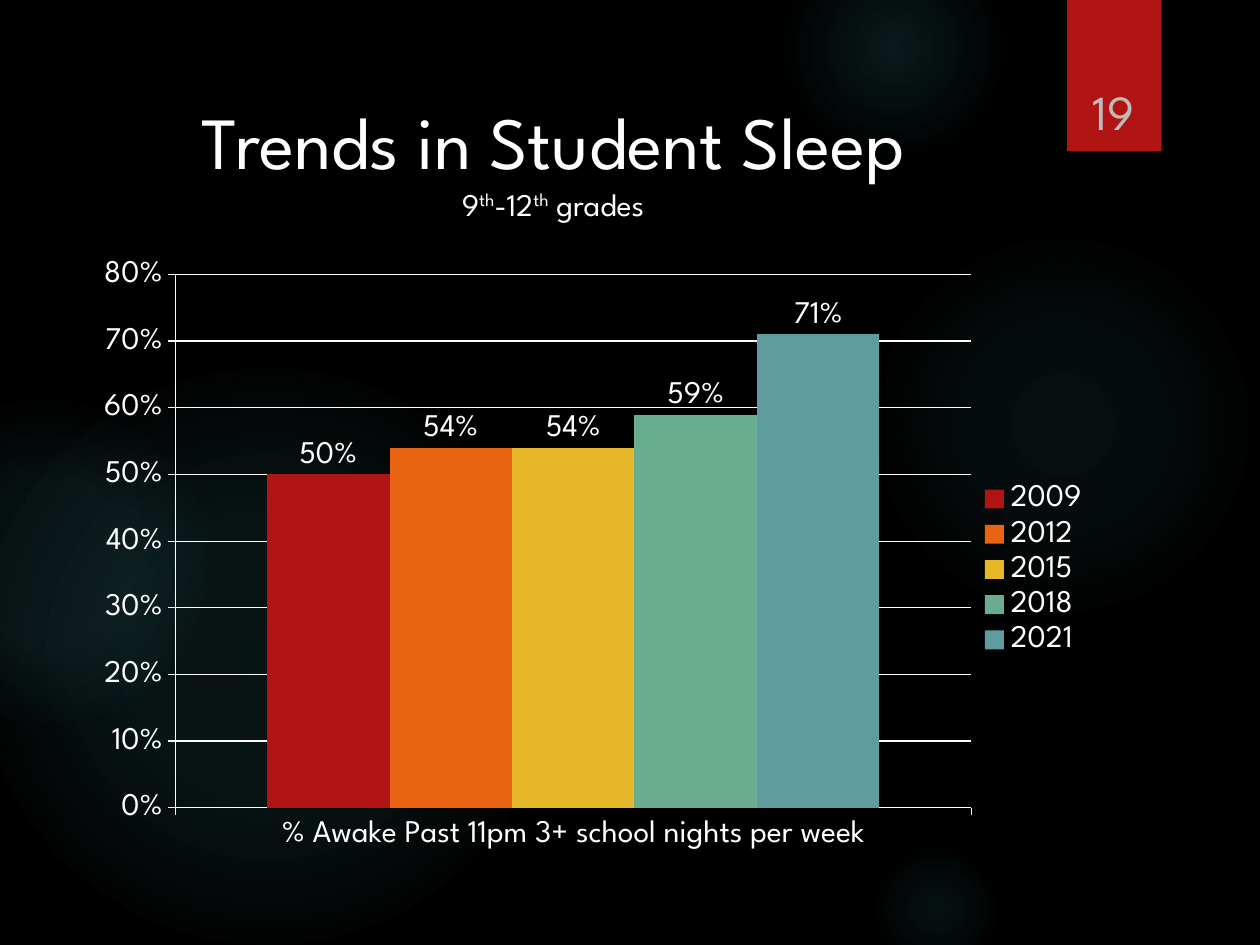
from lxml.etree import SubElement
from pptx import Presentation
from pptx.chart.data import CategoryChartData
from pptx.dml.color import RGBColor
from pptx.enum.chart import XL_CHART_TYPE as ChartType
from pptx.enum.chart import XL_LABEL_POSITION as LabelPosition
from pptx.enum.chart import XL_LEGEND_POSITION as LegendPosition
from pptx.enum.chart import XL_TICK_MARK as TickMark
from pptx.enum.shapes import MSO_SHAPE as Preset
from pptx.enum.text import MSO_ANCHOR as Anchor
from pptx.enum.text import PP_ALIGN as Align
from pptx.oxml import parse_xml
from pptx.oxml.ns import nsdecls, qn
from pptx.util import Inches, Pt

FONT = "League Spartan"
WHITE, BLACK, RED, GLOW = "FFFFFF", "000000", "B01513", "50B9C1"
COLUMNS, ROWS = 100, 75
WIDTH, HEIGHT = Inches(10), Inches(7.5)

GLOWS = [
    (68.9, 18.3, 30.8, [(0, 7), (36, 6), (69, 0)]),
    (62.2, -5, 17.5, [(0, 14), (36, 7), (73, 0)]),
    (68.9, 66.7, 10.8, [(0, 9), (36, 5), (66, 0)]),
    (-1.7, 29.2, 45.8, [(0, 11), (36, 10), (75, 0)]),
    (-9.2, 31.7, 25.8, [(0, 8), (36, 8), (72, 0)]),
]
TITLE_LINE = [("Trends in Student Sleep", 42, 0)]
GRADES_LINE = [("9", 18, 0), ("th", 18, 30), ("-12", 18, 0), ("th", 18, 30), (" grades", 18, 0)]
CATEGORY = "% Awake Past 11pm 3+ school nights per week"
AWAKE_BY_YEAR = [
    ("2009", 0.5, RED),
    ("2012", 0.54, "EA6312"),
    ("2015", 0.54, "E6B729"),
    ("2018", 0.59, "6AAC90"),
    ("2021", 0.71, "5F9C9D"),
]


def color(value):
    return RGBColor.from_string(value)


def grid(left, top, width, height):
    column, row = WIDTH / COLUMNS, HEIGHT / ROWS
    return [round(n) for n in (left * column, top * row, width * column, height * row)]


def add_plain_shape(slide, preset, box):
    shape = slide.shapes.add_shape(preset, *grid(*box))
    shape.line.fill.background()
    shape.shadow.inherit = False
    return shape


def add_glow(slide, left, top, size, stops):
    shape = add_plain_shape(slide, Preset.OVAL, (left, top, size, size))
    stop_xml = "".join(
        f'<a:gs pos="{position * 1000}"><a:srgbClr val="{GLOW}">'
        f'<a:alpha val="{opacity * 1000}"/></a:srgbClr></a:gs>'
        for position, opacity in stops
    )
    gradient = parse_xml(
        f'<a:gradFill {nsdecls("a")}><a:gsLst>{stop_xml}</a:gsLst><a:path path="circle">'
        '<a:fillToRect l="50000" t="50000" r="50000" b="50000"/></a:path></a:gradFill>'
    )
    shape.element.spPr.find(qn("a:prstGeom")).addnext(gradient)


def add_ribbon(slide):
    shape = add_plain_shape(slide, Preset.RECTANGLE, (84.7, 0, 7.5, 12))
    shape.fill.solid()
    shape.fill.fore_color.rgb = color(RED)
    effects = shape.element.spPr.find(qn("a:effectLst"))
    shadow = SubElement(effects, qn("a:outerShdw"), blurRad=str(Pt(3)), dist=str(Pt(2)), dir="5400000")
    shade = SubElement(shadow, qn("a:srgbClr"), val=BLACK)
    SubElement(shade, qn("a:alpha"), val="45000")


def add_run(paragraph, text, size, ink, raised=0):
    run = paragraph.add_run()
    run.text = text
    run.font.name = FONT
    run.font.size = Pt(size)
    run.font.color.rgb = color(ink)
    if raised:
        run.font._element.set("baseline", str(raised * 1000))


def fill_title(slide):
    title = slide.shapes.title
    title.left, title.top, title.width, title.height = grid(5.3, 5, 77.2, 15.3)
    title.text_frame.vertical_anchor = Anchor.MIDDLE
    paragraph = title.text_frame.paragraphs[0]
    paragraph.alignment = Align.CENTER
    for text, size, raised in TITLE_LINE:
        add_run(paragraph, text, size, WHITE, raised)
    paragraph.add_line_break()
    for text, size, raised in GRADES_LINE:
        add_run(paragraph, text, size, WHITE, raised)


def add_page_number(slide):
    frame = slide.shapes.add_textbox(*grid(84.9, 3.2, 6.9, 8.4)).text_frame
    frame.word_wrap = True
    frame.vertical_anchor = Anchor.BOTTOM
    paragraph = frame.paragraphs[0]
    paragraph.alignment = Align.CENTER
    add_run(paragraph, "19", 28, "BCBCBC")


def style_line(line):
    line.color.rgb = color(WHITE)
    line.width = Pt(0.75)


def style_axes(chart):
    for axis in (chart.category_axis, chart.value_axis):
        axis.major_tick_mark = TickMark.OUTSIDE
        axis.minor_tick_mark = TickMark.NONE
        style_line(axis.format.line)
    values = chart.value_axis
    values.minimum_scale, values.maximum_scale, values.major_unit = 0, 0.8, 0.1
    values.has_major_gridlines = True
    style_line(values.major_gridlines.format.line)
    values.tick_labels.number_format = "0%"
    values.tick_labels.number_format_is_linked = False


def style_series(series, fill):
    series.format.fill.solid()
    series.format.fill.fore_color.rgb = color(fill)
    labels = series.data_labels
    labels.show_value = True
    labels.number_format = "0%"
    labels.number_format_is_linked = False
    labels.position = LabelPosition.OUTSIDE_END


def place_plot(chart, left, top, width, height):
    plot_area = chart.element.find(".//" + qn("c:plotArea"))
    for layout in plot_area.findall(qn("c:layout")):
        plot_area.remove(layout)
    settings = [("layoutTarget", "inner"), ("xMode", "edge"), ("yMode", "edge"),
                ("x", left), ("y", top), ("w", width), ("h", height)]
    inner = "".join(f'<c:{name} val="{value}"/>' for name, value in settings)
    plot_area.insert(0, parse_xml(
        f'<c:layout {nsdecls("c")}><c:manualLayout>{inner}</c:manualLayout></c:layout>'
    ))


def add_sleep_chart(slide):
    data = CategoryChartData(number_format="0%")
    data.categories = [CATEGORY]
    for year, share, _ in AWAKE_BY_YEAR:
        data.add_series(year, [share])
    box = grid(7.5, 20.3, 80, 49.8)
    chart = slide.shapes.add_chart(ChartType.COLUMN_CLUSTERED, *box, data).chart
    chart.has_title = False
    chart.font.name = FONT
    chart.font.size = Pt(18)
    chart.font.color.rgb = color(WHITE)
    chart.has_legend = True
    chart.legend.position = LegendPosition.RIGHT
    chart.legend.include_in_layout = False
    plot = chart.plots[0]
    plot.gap_width, plot.overlap = 150, 0
    plot.vary_by_categories = False
    style_axes(chart)
    for series, (_, _, fill) in zip(plot.series, AWAKE_BY_YEAR):
        style_series(series, fill)
    place_plot(chart, 0.08, 0.03, 0.79, 0.85)


def main():
    presentation = Presentation()
    presentation.slide_width, presentation.slide_height = WIDTH, HEIGHT
    slide = presentation.slides.add_slide(presentation.slide_layouts[5])
    slide.background.fill.solid()
    slide.background.fill.fore_color.rgb = color(BLACK)
    for glow in GLOWS:
        add_glow(slide, *glow)
    add_ribbon(slide)
    fill_title(slide)
    slide.shapes.element.append(slide.shapes.title.element)
    add_sleep_chart(slide)
    add_page_number(slide)
    presentation.save("out.pptx")


if __name__ == "__main__":
    main()
